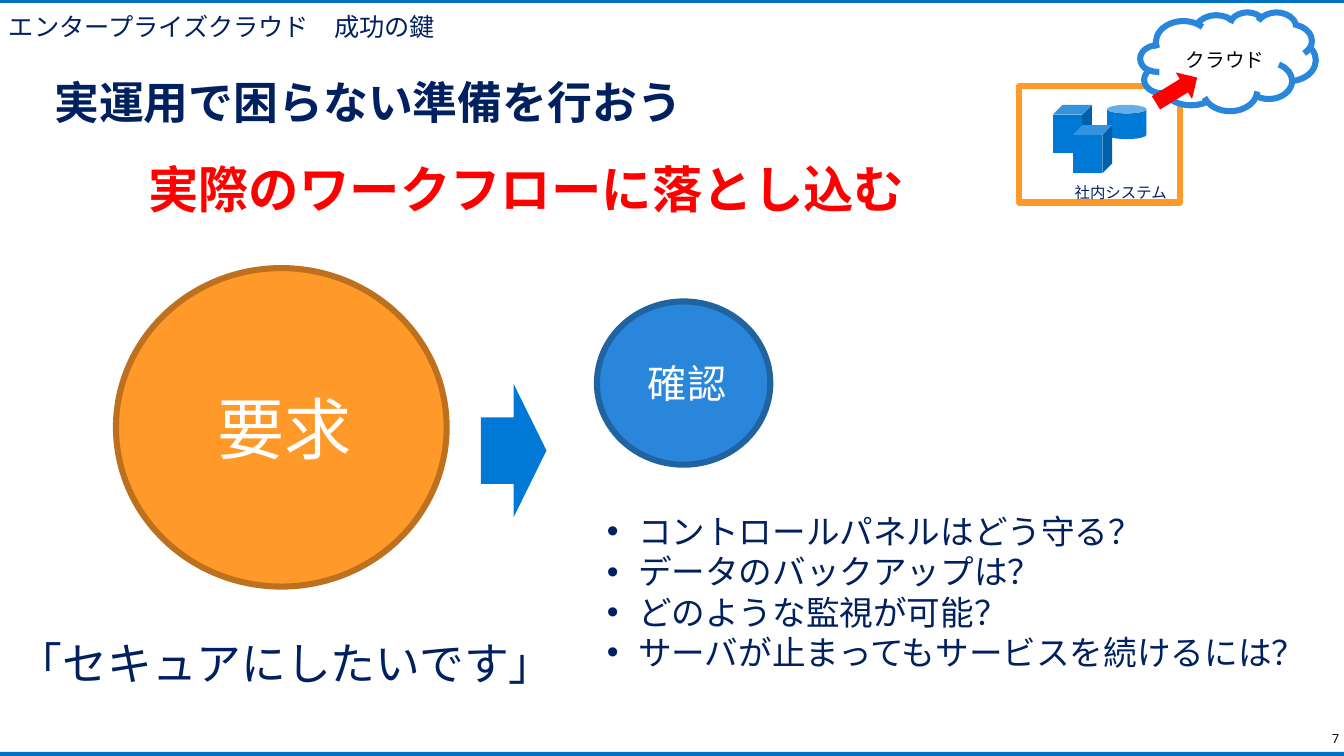
from lxml import etree
from pptx import Presentation
from pptx.dml.color import RGBColor
from pptx.enum.shapes import MSO_SHAPE as Shape
from pptx.enum.text import MSO_ANCHOR as Anchor, MSO_AUTO_SIZE as AutoSize, PP_ALIGN as Align
from pptx.oxml.ns import qn
from pptx.util import Inches, Pt

NAVY, RED, WHITE, BLACK = "002060", "FF0000", "FFFFFF", "000000"
BLUE, SKY, ORANGE, BAR = "0079D6", "2A86DA", "FF9929", "0072C6"


def color(hex_string):
    return RGBColor.from_string(hex_string)


class SlideBuilder:
    text_font = "Roboto"
    shape_font = "Noto Sans CJK JP"
    line_width = 4.33

    def __init__(self, slide):
        self.slide = slide

    def format_runs(self, frame, font, size, ink, bold=False, align=None):
        for paragraph in frame.paragraphs:
            paragraph.alignment = align
            for run in paragraph.runs:
                run.font.name = font
                run.font.size = Pt(size)
                run.font.bold = bold
                run.font.color.rgb = color(ink)

    def shape(self, kind, box, fill, line=None, rotation=0):
        item = self.slide.shapes.add_shape(kind, *map(Inches, box))
        item.shadow.inherit = False
        item.rotation = rotation
        item.fill.solid()
        item.fill.fore_color.rgb = color(fill)
        if line:
            item.line.color.rgb = color(line)
            item.line.width = Pt(self.line_width)
        else:
            item.line.fill.background()
        return item

    def labelled(self, kind, box, fill, line, label, size, ink=WHITE):
        frame = self.shape(kind, box, fill, line).text_frame
        frame.margin_left = Inches(0.12)
        frame.margin_right = frame.margin_top = frame.margin_bottom = Inches(0.05)
        frame.vertical_anchor = Anchor.MIDDLE
        frame.text = label
        self.format_runs(frame, self.shape_font, size, ink, align=Align.CENTER)

    def text(self, box, words, size, ink=NAVY, bold=False, wrap=False, align=None):
        frame = self.slide.shapes.add_textbox(*map(Inches, box)).text_frame
        frame.word_wrap = wrap
        frame.auto_size = AutoSize.SHAPE_TO_FIT_TEXT
        frame.text = words
        self.format_runs(frame, self.text_font, size, ink, bold, align)
        return frame

    def bullets(self, box, items, size):
        frame = self.text(box, "\n".join(items), size, wrap=True)
        indent = Inches(0.31)
        for paragraph in frame.paragraphs:
            properties = paragraph._p.get_or_add_pPr()
            properties.set("marL", str(indent))
            properties.set("indent", str(-indent))
            etree.SubElement(properties, qn("a:buFont")).set("typeface", "Arial")
            etree.SubElement(properties, qn("a:buChar")).set("char", "•")


def main():
    deck = Presentation()
    deck.slide_width, deck.slide_height = Inches(13.33), Inches(7.5)
    page = SlideBuilder(deck.slides.add_slide(deck.slide_layouts[6]))

    # Frame bars and page number
    for top in (7.46, -0.01):
        page.shape(Shape.RECTANGLE, (0, top, 13.33, 0.04), BAR)
    page_number = page.text((12.65, 7.2, 0.73, 0.25), "7", 9, BLACK, wrap=True, align=Align.RIGHT)
    page_number.vertical_anchor = Anchor.MIDDLE

    # Section title
    page.text((-0.01, 0.06, 4.49, 0.4), "エンタープライズクラウド　成功の鍵", 18)

    # In-house system moving to the cloud
    page.shape(Shape.RECTANGLE, (10.11, 0.85, 1.59, 1.16), WHITE, ORANGE)
    page.shape(Shape.CAN, (10.98, 1.04, 0.39, 0.34), BLUE)
    for step in range(2):
        page.shape(Shape.CUBE, (10.44 + 0.2 * step, 1.04 + 0.2 * step, 0.39, 0.48), BLUE)
    page.text((10.56, 1.77, 1.13, 0.29), "社内システム", 11)
    page.labelled(Shape.CLOUD, (11.31, 0.12, 1.74, 0.98), WHITE, SKY, "クラウド", 14, BLACK)
    page.shape(Shape.RIGHT_ARROW, (11.43, 0.74, 0.48, 0.31), RED, rotation=328.5)

    # Headings
    page.text((0.44, 0.69, 6.48, 0.64), "実運用で困らない準備を行おう", 32, bold=True)
    page.text((1.37, 1.52, 7.78, 0.71), "実際のワークフローに落とし込む", 36, RED, bold=True)

    # Request
    page.labelled(Shape.OVAL, (1.15, 2.66, 3.28, 3.16), ORANGE, "BD711E", "要求", 48)
    page.text((0.08, 6.26, 5.59, 0.64), "「セキュアにしたいです」", 32)

    # Confirmation
    page.shape(Shape.RIGHT_ARROW, (4.77, 3.81, 0.65, 1.32), BLUE)
    page.labelled(Shape.OVAL, (5.92, 2.99, 1.72, 1.62), SKY, "1F63A1", "確認", 28)
    questions = [
        "コントロールパネルはどう守る？",
        "データのバックアップは？",
        "どのような監視が可能？",
        "サーバが止まってもサービスを続けるには？",
    ]
    page.bullets((5.92, 5.02, 7.25, 1.72), questions, 24)

    deck.save("out.pptx")


if __name__ == "__main__":
    main()
